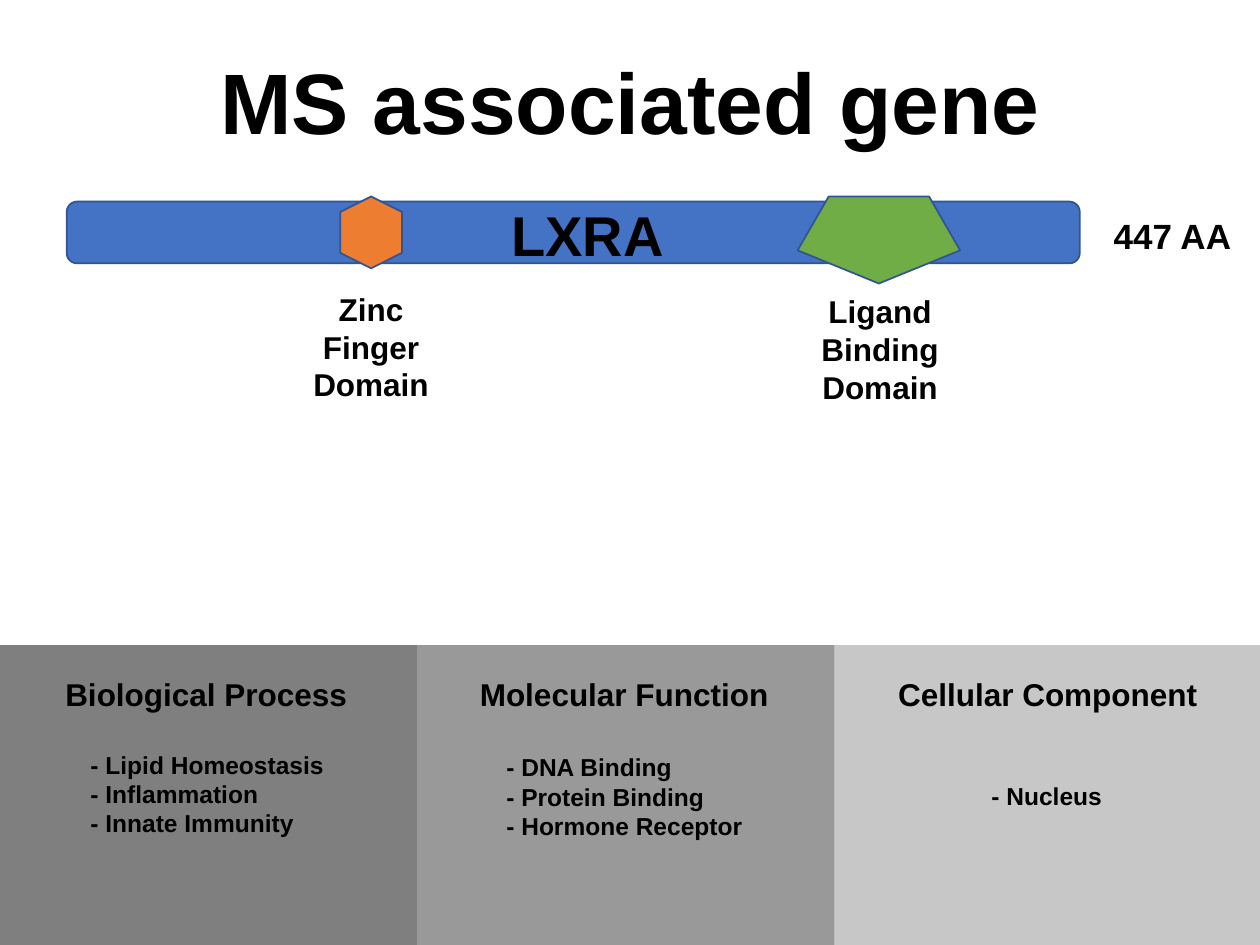
import pptx
import pptx.util
import pptx.dml.color
import pptx.enum.shapes
import pptx.enum.text
import pptx.oxml.ns
import lxml.etree

Inches = pptx.util.Inches
Pt = pptx.util.Pt
RGBColor = pptx.dml.color.RGBColor
Shape = pptx.enum.shapes.MSO_SHAPE
Align = pptx.enum.text.PP_ALIGN
Anchor = pptx.enum.text.MSO_ANCHOR
AutoSize = pptx.enum.text.MSO_AUTO_SIZE

BLACK = RGBColor(0x00, 0x00, 0x00)
BLUE = RGBColor(0x44, 0x72, 0xC4)
ORANGE = RGBColor(0xED, 0x7D, 0x31)
GREEN = RGBColor(0x70, 0xAD, 0x47)
OUTLINE = RGBColor(0x32, 0x54, 0x91)


def write_text(frame, text, size, align=Align.LEFT, spacing=None):
    frame.text = text
    for paragraph in frame.paragraphs:
        paragraph.alignment = align
        if spacing:
            paragraph.line_spacing = spacing
        for run in paragraph.runs:
            run.font.name = "Arial"
            run.font.size = Pt(size)
            run.font.bold = True
            run.font.color.rgb = BLACK


class GeneSlide:
    def __init__(self, slide):
        self.slide = slide
        self.outline_width = Pt(1)

    def title(self, text, left, top, width, height):
        heading = self.slide.shapes.title
        heading.left, heading.top = Inches(left), Inches(top)
        heading.width, heading.height = Inches(width), Inches(height)
        heading.text_frame.vertical_anchor = Anchor.MIDDLE
        write_text(heading.text_frame, text, 49, Align.CENTER, 0.9)

    def shape(self, shapes, kind, left, top, width, height, color):
        part = shapes.add_shape(kind, Inches(left), Inches(top),
                                Inches(width), Inches(height))
        part.shadow.inherit = False
        part.fill.solid()
        part.fill.fore_color.rgb = color
        return part

    def domain(self, shapes, kind, left, top, width, height, color, rotation=0):
        part = self.shape(shapes, kind, left, top, width, height, color)
        part.line.color.rgb = OUTLINE
        part.line.width = self.outline_width
        part.rotation = rotation

    def panel(self, left, top, width, height, opacity):
        part = self.shape(self.slide.shapes, Shape.RECTANGLE,
                          left, top, width, height, BLACK)
        part.line.fill.background()
        color = part.fill._xPr.find(".//" + pptx.oxml.ns.qn("a:srgbClr"))
        alpha = lxml.etree.SubElement(color, pptx.oxml.ns.qn("a:alpha"))
        alpha.set("val", str(opacity * 1000))

    def label(self, shapes, text, left, top, width, height, size,
              align=Align.LEFT, wrap=False):
        box = shapes.add_textbox(Inches(left), Inches(top),
                                 Inches(width), Inches(height))
        box.text_frame.word_wrap = wrap
        box.text_frame.auto_size = AutoSize.SHAPE_TO_FIT_TEXT
        write_text(box.text_frame, text, size, align)


def main():
    deck = pptx.Presentation()
    deck.slide_width, deck.slide_height = Inches(10), Inches(7.5)
    slide = deck.slides.add_slide(deck.slide_layouts[5])
    page = GeneSlide(slide)
    page.title("MS associated gene", 0, 0.12, 10, 1.45)

    gene = slide.shapes.add_group_shape().shapes
    page.domain(gene, Shape.ROUNDED_RECTANGLE, 0.53, 1.6, 8.04, 0.49, BLUE)
    page.domain(gene, Shape.HEXAGON, 2.66, 1.6, 0.57, 0.49, ORANGE, 90)
    page.domain(gene, Shape.REGULAR_PENTAGON, 6.33, 1.56, 1.29, 0.69, GREEN, 180)
    page.label(gene, "447 AA", 8.74, 1.65, 1.14, 0.44, 20)
    for name, left, top in (("Zinc Finger Domain", 2.28, 2.25),
                            ("Ligand Binding Domain", 6.32, 2.27)):
        page.label(gene, name, left, top, 1.33, 1.01, 18, Align.CENTER, True)

    panel_top, panel_step = 5.12, 3.31
    categories = (
        (50, 3.31, "Biological Process", (0.42, 2.46),
         ("Lipid Homeostasis", "Inflammation", "Innate Immunity"),
         (0.62, 5.9, 2.06, 0.81)),
        (40, 3.31, "Molecular Function", (3.71, 2.52),
         ("DNA Binding", "Protein Binding", "Hormone Receptor"),
         (3.92, 5.92, 2.08, 0.81)),
        (22, 3.38, "Cellular Component", (7.03, 2.6),
         ("Nucleus",), (7.77, 6.15, 1.08, 0.34)),
    )
    for column, (opacity, width, heading, (left, heading_width),
                 terms, terms_area) in enumerate(categories):
        page.panel(column * panel_step, panel_top, width, 7.5 - panel_top, opacity)
        page.label(slide.shapes, heading, left, 5.31, heading_width, 0.4, 18)
        term_lines = "\n".join(f"- {term}" for term in terms)
        page.label(slide.shapes, term_lines, *terms_area, 14)

    page.label(slide.shapes, "LXRA", 3.96, 1.54, 1.42, 0.64, 32)
    deck.save("out.pptx")


if __name__ == "__main__":
    main()
